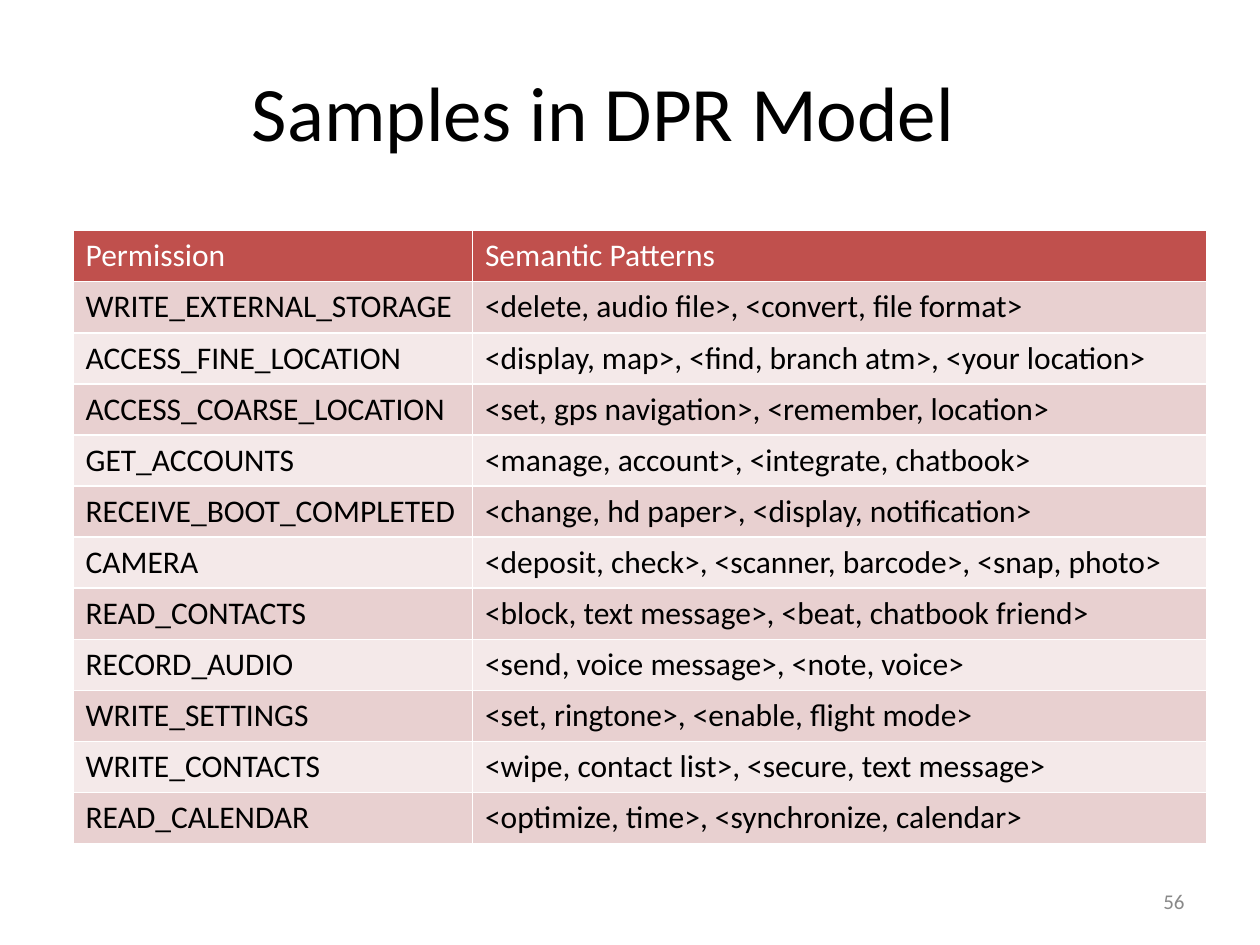
"""Build the slide of sample permissions and their semantic patterns."""
import dataclasses
import typing

import lxml.etree
import pptx
import pptx.dml.color
import pptx.enum.text
import pptx.oxml.ns
import pptx.util

Inches = pptx.util.Inches
Align = pptx.enum.text.PP_ALIGN
Anchor = pptx.enum.text.MSO_ANCHOR


@dataclasses.dataclass(frozen=True)
class Theme:
    font: str = "Calibri"
    ink: str = "000000"
    white: str = "FFFFFF"
    grey: str = "898989"
    head: str = "C0504D"
    bands: tuple[str, str] = ("E8D0D0", "F4E9E9")
    title: int = 44
    body: int = 18
    small: int = 12
    rule: int = 1


class Sample(typing.NamedTuple):
    name: str
    terms: str


class Box(typing.NamedTuple):
    left: float
    top: float
    width: float
    height: float

    def place(self) -> tuple[int, ...]:
        return tuple(Inches(side) for side in self)


THEME = Theme()
HEADER = Sample("Permission", "Semantic Patterns")
SAMPLES = [
    Sample("WRITE_EXTERNAL_STORAGE", "<delete, audio file>, <convert, file format>"),
    Sample("ACCESS_FINE_LOCATION", "<display, map>, <find, branch atm>, <your location>"),
    Sample("ACCESS_COARSE_LOCATION", "<set, gps navigation>, <remember, location>"),
    Sample("GET_ACCOUNTS", "<manage, account>, <integrate, chatbook>"),
    Sample("RECEIVE_BOOT_COMPLETED", "<change, hd paper>, <display, notification>"),
    Sample("CAMERA", "<deposit, check>, <scanner, barcode>, <snap, photo>"),
    Sample("READ_CONTACTS", "<block, text message>, <beat, chatbook friend>"),
    Sample("RECORD_AUDIO", "<send, voice message>, <note, voice>"),
    Sample("WRITE_SETTINGS", "<set, ringtone>, <enable, flight mode>"),
    Sample("WRITE_CONTACTS", "<wipe, contact list>, <secure, text message>"),
    Sample("READ_CALENDAR", "<optimize, time>, <synchronize, calendar>"),
]
WIDTHS = (3.17, 5.83)


def rgb(code: str) -> pptx.dml.color.RGBColor:
    return pptx.dml.color.RGBColor.from_string(code)


def write(frame, text: str, *, size: int, color: str, align=Align.LEFT) -> None:
    frame.word_wrap = True
    line = frame.paragraphs[0]
    line.alignment = align
    run = line.add_run()
    run.text = text
    run.font.name = THEME.font
    run.font.size = pptx.util.Pt(size)
    run.font.color.rgb = rgb(color)


def add_text(slide, box: Box, text: str, **style) -> None:
    frame = slide.shapes.add_textbox(*box.place()).text_frame
    frame.vertical_anchor = Anchor.MIDDLE
    write(frame, text, **style)


def edge(cell) -> None:
    qn = pptx.oxml.ns.qn
    props = cell._tc.get_or_add_tcPr()
    for side in ("lnL", "lnR", "lnT", "lnB"):
        line = lxml.etree.SubElement(props, qn(f"a:{side}"), w=str(pptx.util.Pt(THEME.rule)))
        fill = lxml.etree.SubElement(line, qn("a:solidFill"))
        lxml.etree.SubElement(fill, qn("a:srgbClr"), val=THEME.white)


def add_grid(slide, box: Box) -> None:
    rows = [HEADER, *SAMPLES]
    grid = slide.shapes.add_table(len(rows), len(WIDTHS), *box.place()).table
    grid.first_row = grid.horz_banding = False
    for col, width in zip(grid.columns, WIDTHS):
        col.width = Inches(width)
    for i, row in enumerate(rows):
        fill = THEME.bands[(i - 1) % 2] if i else THEME.head
        color = THEME.ink if i else THEME.white
        for j, text in enumerate(row):
            cell = grid.cell(i, j)
            edge(cell)
            cell.fill.solid()
            cell.fill.fore_color.rgb = rgb(fill)
            write(cell.text_frame, text, size=THEME.body, color=color)


def main() -> None:
    deck = pptx.Presentation()
    deck.slide_width, deck.slide_height = Inches(10), Inches(7.5)
    slide = deck.slides.add_slide(deck.slide_layouts[6])
    add_text(slide, Box(1.5, 0.25, 6.58, 1.25), "Samples in DPR Model",
             size=THEME.title, color=THEME.ink, align=Align.CENTER)
    add_grid(slide, Box(0.58, 1.83, sum(WIDTHS), 4.87))
    add_text(slide, Box(7.17, 6.95, 2.33, 0.4), "56",
             size=THEME.small, color=THEME.grey, align=Align.RIGHT)
    deck.save("out.pptx")


if __name__ == "__main__":
    main()
